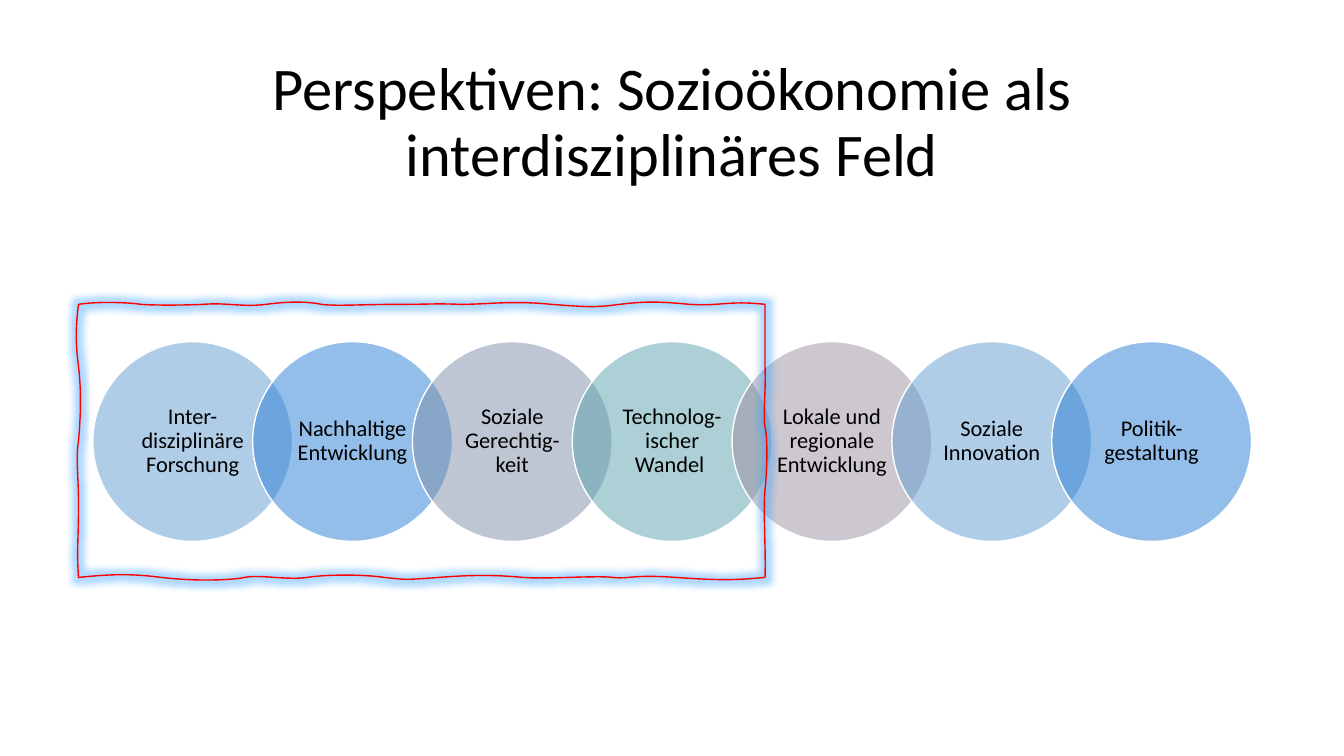
from dataclasses import dataclass

from lxml.etree import SubElement
from pptx import Presentation
from pptx.dml.color import RGBColor
from pptx.enum.shapes import MSO_SHAPE
from pptx.enum.text import MSO_ANCHOR, PP_ALIGN
from pptx.oxml.ns import qn
from pptx.util import Cm, Pt


@dataclass(frozen=True)
class Theme:
    """Colours, font and sizes of the slide."""
    font: str = "Calibri"
    text: str = "000000"
    outline: str = "FFFFFF"
    frame: str = "FF0000"
    glow: str = "3AA0FF"
    circles: tuple = ("629DD1", "297FD5", "7F8FA9", "5AA2AE", "9D90A0")
    title_size: float = 43.2
    label_size: float = 16
    line_width: float = 1


THEME = Theme()
TITLE = "Perspektiven: Sozioökonomie als interdisziplinäres Feld"
PERSPECTIVES = (
    "Inter-disziplinäre Forschung",
    "Nachhaltige Entwicklung",
    "Soziale Gerechtig-keit",
    "Technolog-ischer Wandel ",
    "Lokale und regionale Entwicklung",
    "Soziale Innovation",
    "Politik-gestaltung",
)
STEP_RATIO = 0.8

FRAME_SIZE = (681, 271)
FRAME_CURVES = (
    ((19, -3), (49, -2), (62, 0)),
    ((75, 1), (101, 1), (124, 0)),
    ((147, -2), (163, 3), (186, 0)),
    ((209, -3), (226, -3), (241, 0)),
    ((257, 2), (280, 0), (317, 0)),
    ((354, 0), (350, -1), (379, 0)),
    ((408, 0), (429, -4), (469, 0)),
    ((509, 3), (513, 3), (537, 0)),
    ((562, -3), (575, -3), (606, 0)),
    ((638, 2), (644, -4), (681, 0)),
    ((681, 23), (681, 39), (681, 62)),
    ((682, 85), (679, 109), (681, 122)),
    ((684, 134), (683, 165), (681, 184)),
    ((679, 203), (682, 244), (681, 271)),
    ((651, 274), (635, 274), (592, 271)),
    ((548, 268), (546, 273), (530, 271)),
    ((513, 269), (463, 273), (441, 271)),
    ((418, 269), (396, 268), (358, 271)),
    ((320, 274), (323, 273), (303, 271)),
    ((283, 268), (246, 268), (227, 271)),
    ((208, 274), (179, 268), (165, 271)),
    ((151, 274), (115, 275), (82, 271)),
    ((50, 267), (31, 268), (0, 271)),
    ((-2, 244), (0, 233), (0, 200)),
    ((0, 168), (-3, 155), (0, 135)),
    ((2, 115), (3, 86), (0, 62)),
    ((-3, 38), (-3, 23), (0, 0)),
)


def write_centred(frame, text, size):
    """Write one centred paragraph in the theme font."""
    frame.word_wrap = True
    frame.vertical_anchor = MSO_ANCHOR.MIDDLE
    paragraph = frame.paragraphs[0]
    paragraph.text = text
    paragraph.alignment = PP_ALIGN.CENTER
    paragraph.line_spacing = 0.9
    paragraph.font.name = THEME.font
    paragraph.font.size = Pt(size)
    paragraph.font.color.rgb = RGBColor.from_string(THEME.text)


def set_line(shape, colour):
    """Give a shape a thin outline and no shadow."""
    shape.shadow.inherit = False
    shape.line.color.rgb = RGBColor.from_string(colour)
    shape.line.width = Pt(THEME.line_width)


def add_alpha(colour, percent):
    """Set the opacity of a colour element."""
    SubElement(colour, qn("a:alpha"), val=str(percent * 1000))


def add_title(slide, left, top, width, height):
    """Place the slide title."""
    title = slide.shapes.add_textbox(left, top, width, height)
    write_centred(title.text_frame, TITLE, THEME.title_size)


def add_circle_chain(slide, left, top, width):
    """Spread overlapping translucent circles over the given width."""
    diameter = width / (1 + STEP_RATIO * (len(PERSPECTIVES) - 1))
    for index, perspective in enumerate(PERSPECTIVES):
        circle = slide.shapes.add_shape(
            MSO_SHAPE.OVAL, int(left + index * STEP_RATIO * diameter), top,
            int(diameter), int(diameter))
        set_line(circle, THEME.outline)
        circle.fill.solid()
        colour = THEME.circles[index % len(THEME.circles)]
        circle.fill.fore_color.rgb = RGBColor.from_string(colour)
        solid = circle.element.spPr.find(qn("a:solidFill"))
        add_alpha(solid.find(qn("a:srgbClr")), 50)
        label = circle.text_frame
        label.margin_left = label.margin_right = Cm(0.28)
        label.margin_top = label.margin_bottom = Cm(0.05)
        write_centred(label, perspective, THEME.label_size)


def bend_segments(shape, curves):
    """Turn the straight segments of a freeform into cubic curves."""
    segments = list(shape.element.spPr.iter(qn("a:lnTo")))
    for segment, curve in zip(segments, curves):
        bend = segment.makeelement(qn("a:cubicBezTo"))
        for x, y in curve:
            SubElement(bend, qn("a:pt"), x=str(x), y=str(y))
        segment.getparent().replace(segment, bend)


def add_sketched_frame(slide, left, top, width, height):
    """Draw the glowing hand-drawn frame in the given box."""
    scale = (width / FRAME_SIZE[0], height / FRAME_SIZE[1])
    builder = slide.shapes.build_freeform(0, 0, scale)
    builder.add_line_segments([curve[-1] for curve in FRAME_CURVES], close=True)
    sketch = builder.convert_to_shape(left, top)
    bend_segments(sketch, FRAME_CURVES)
    sketch.fill.background()
    set_line(sketch, THEME.frame)
    effects = sketch.element.spPr.find(qn("a:effectLst"))
    glow = SubElement(effects, qn("a:glow"), rad=str(Cm(0.28)))
    add_alpha(SubElement(glow, qn("a:srgbClr"), val=THEME.glow), 40)


def main():
    """Build and save the slide."""
    presentation = Presentation()
    presentation.slide_width = Cm(33.87)
    presentation.slide_height = Cm(19.05)
    slide = presentation.slides.add_slide(presentation.slide_layouts[6])
    add_title(slide, Cm(2.33), Cm(1.55), Cm(29.21), Cm(3.15))
    add_circle_chain(slide, Cm(2.34), Cm(8.61), Cm(29.2))
    add_sketched_frame(slide, Cm(1.98), Cm(7.67), Cm(17.3), Cm(6.88))
    presentation.save("out.pptx")


if __name__ == "__main__":
    main()
